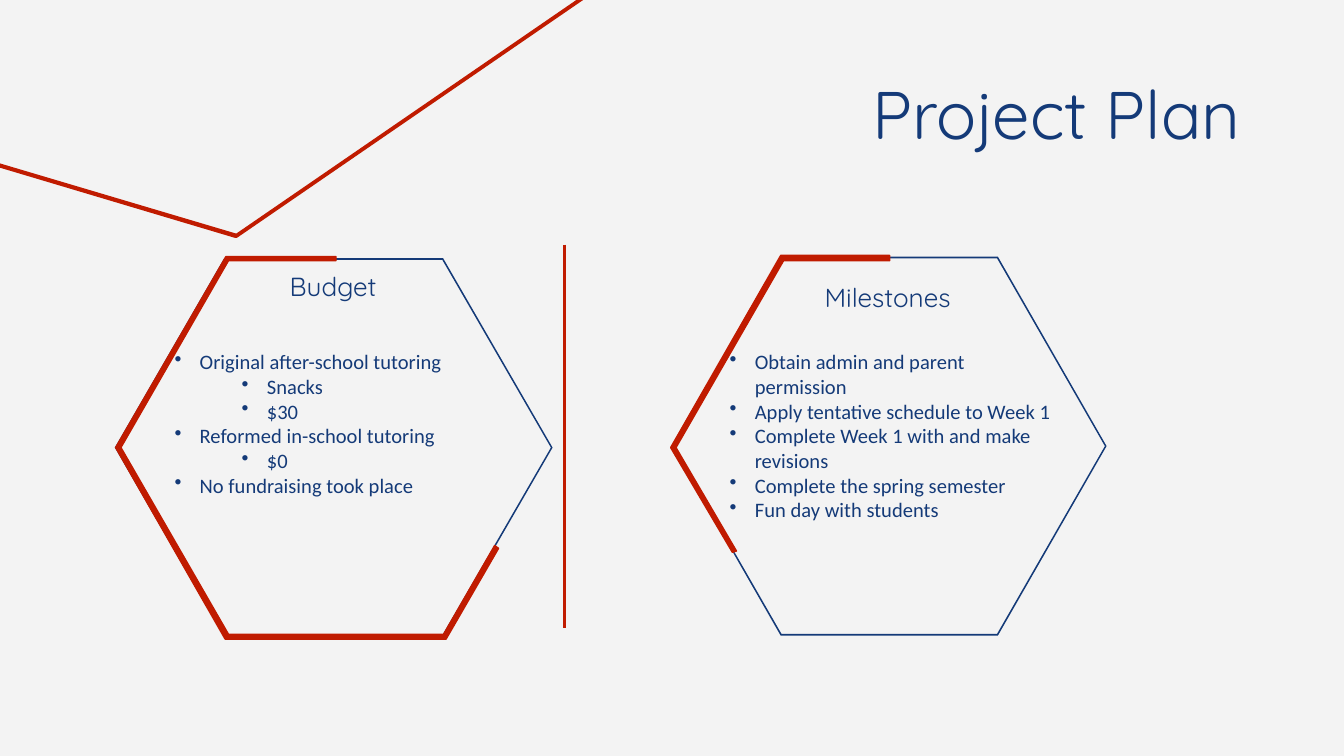
import pptx
import pptx.dml.color
import pptx.enum.shapes
import pptx.enum.text
import pptx.oxml
import pptx.oxml.ns
import pptx.util

COLORS = {"paper": "F3F3F3", "navy": "143A78", "red": "C01B00", "gray": "D9D9D9"}
ALIGN = pptx.enum.text.PP_ALIGN
ANCHOR = pptx.enum.text.MSO_ANCHOR
INDENT = 13.5
LEVEL_STEP = 36

BUDGET = [
    ("Original after-school tutoring", 0),
    ("Snacks", 1),
    ("$30", 1),
    ("Reformed in-school tutoring", 0),
    ("$0", 1),
    ("No fundraising took place", 0),
]
MILESTONES = [
    ("Obtain admin and parent permission", 0),
    ("Apply tentative schedule to Week 1", 0),
    ("Complete Week 1 with and make revisions", 0),
    ("Complete the spring semester", 0),
    ("Fun day with students", 0),
]
CORNER_LINE = [(347.8, -25.9), (126.7, 126), (-18.7, 82.8), (-18.7, 83.5),
               (126, 126.7), (126.7, 126.7), (347.8, -25.2)]
BUDGET_ACCENT = [(121, 137.5), (61.9, 239.8), (120.6, 342.4), (239, 342.4),
                 (267.1, 293.8), (265, 292.3), (237.6, 339.8), (122.4, 339.8),
                 (64.8, 239.8), (122.4, 139.7), (180, 139.7), (180, 137.5)]
MILESTONES_ACCENT = [(418.3, 136.8), (359.3, 239.8), (392.4, 295.9), (394.6, 295.2),
                     (362.2, 239.8), (419.8, 139.7), (476.6, 139.7), (476.6, 136.8)]


def color(name):
    return pptx.dml.color.RGBColor.from_string(COLORS[name])


def add_bullet(para, level):
    para.level = level
    properties = para._p.get_or_add_pPr()
    properties.set("marL", str(pptx.util.Pt(INDENT + LEVEL_STEP * level)))
    properties.set("indent", str(pptx.util.Pt(-INDENT)))
    namespace = pptx.oxml.ns.nsdecls("a")
    for xml in (
        f'<a:buClr {namespace}><a:srgbClr val="{COLORS["navy"]}"/></a:buClr>',
        f'<a:buChar {namespace} char="•"/>',
    ):
        properties.append(pptx.oxml.parse_xml(xml))


def add_text(page, lines, left, top, width, height, *, size, font,
             align=ALIGN.LEFT, anchor=ANCHOR.TOP, bullets=False):
    """Add a text box from (text, level) lines."""
    box = page.shapes.add_textbox(*map(pptx.util.Pt, (left, top, width, height)))
    frame = box.text_frame
    frame.word_wrap = True
    frame.vertical_anchor = anchor
    frame.margin_left = frame.margin_right = pptx.util.Pt(7.2)
    frame.margin_top = frame.margin_bottom = pptx.util.Pt(7.2)
    for index, (text, level) in enumerate(lines):
        para = frame.add_paragraph() if index else frame.paragraphs[0]
        para.alignment = align
        if bullets:
            add_bullet(para, level)
        span = para.add_run()
        span.text = text
        span.font.size = pptx.util.Pt(size)
        span.font.name = font
        span.font.color.rgb = color("navy")


def add_outline(page, contours, fill, line=None, weight=0.75):
    """Add one filled freeform; a second contour cuts a hole."""
    contours = [[(pptx.util.Pt(x), pptx.util.Pt(y)) for x, y in points]
                for points in contours]
    builder = page.shapes.build_freeform(*contours[0][0], scale=1.0)
    for index, points in enumerate(contours):
        if index:
            builder.move_to(*points[0])
        builder.add_line_segments(points[1:], close=True)
    shape = builder.convert_to_shape()
    shape.shadow.inherit = False
    shape.fill.solid()
    shape.fill.fore_color.rgb = color(fill)
    if line:
        shape.line.color.rgb = color(line)
        shape.line.width = pptx.util.Pt(weight)
    else:
        shape.line.fill.background()


def hexagon_points(left, top, width, height):
    right, bottom = left + width, top + height
    middle, corner = top + height / 2, width / 4
    return [(left + corner, top), (left, middle), (left + corner, bottom),
            (right - corner, bottom), (right, middle), (right - corner, top)]


def add_hexagon_ring(page, left, top, width, height, thickness=0.9):
    outer = hexagon_points(left, top, width, height)
    inner = hexagon_points(left + thickness, top + thickness,
                           width - 2 * thickness, height - 2 * thickness)
    add_outline(page, [outer, inner[::-1]], "navy")


def add_divider(page, x, top, bottom):
    divider = page.shapes.add_connector(
        pptx.enum.shapes.MSO_CONNECTOR.STRAIGHT,
        *map(pptx.util.Pt, (x, top, x, bottom)))
    divider.line.color.rgb = color("red")
    divider.line.width = pptx.util.Pt(1.5)
    effects = f'<a:effectLst {pptx.oxml.ns.nsdecls("a")}/>'
    divider._element.spPr.append(pptx.oxml.parse_xml(effects))


def main():
    deck = pptx.Presentation()
    deck.slide_width, deck.slide_height = pptx.util.Pt(720), pptx.util.Pt(405)
    page = deck.slides.add_slide(deck.slide_layouts[6])
    page.background.fill.solid()
    page.background.fill.fore_color.rgb = color("paper")

    heading = {"size": 14, "font": "Quicksand", "align": ALIGN.CENTER,
               "anchor": ANCHOR.MIDDLE}
    body = {"size": 11, "font": "Calibri", "bullets": True}

    add_text(page, [("Project Plan", 0)], 400.3, 31.7, 271.4, 74.2,
             size=36, font="Quicksand", align=ALIGN.RIGHT)
    add_outline(page, [CORNER_LINE], "gray", "red", 1.5)
    add_hexagon_ring(page, 61.5, 138.3, 234.5, 203)
    add_hexagon_ring(page, 360, 137.5, 232.8, 203)
    add_outline(page, [MILESTONES_ACCENT], "red", "red")
    add_text(page, [("Budget", 0)], 120.2, 138.2, 116.6, 30.2, **heading)
    add_divider(page, 302.4, 131, 336.2)
    add_text(page, BUDGET, 86.4, 180, 195.1, 76.3, **body)
    add_text(page, [("Milestones", 0)], 416.9, 145.4, 117.4, 27.4, **heading)
    add_outline(page, [BUDGET_ACCENT], "red", "red")
    add_text(page, MILESTONES, 383.8, 180, 188.6, 160.6, **body)

    deck.save("out.pptx")


if __name__ == "__main__":
    main()
